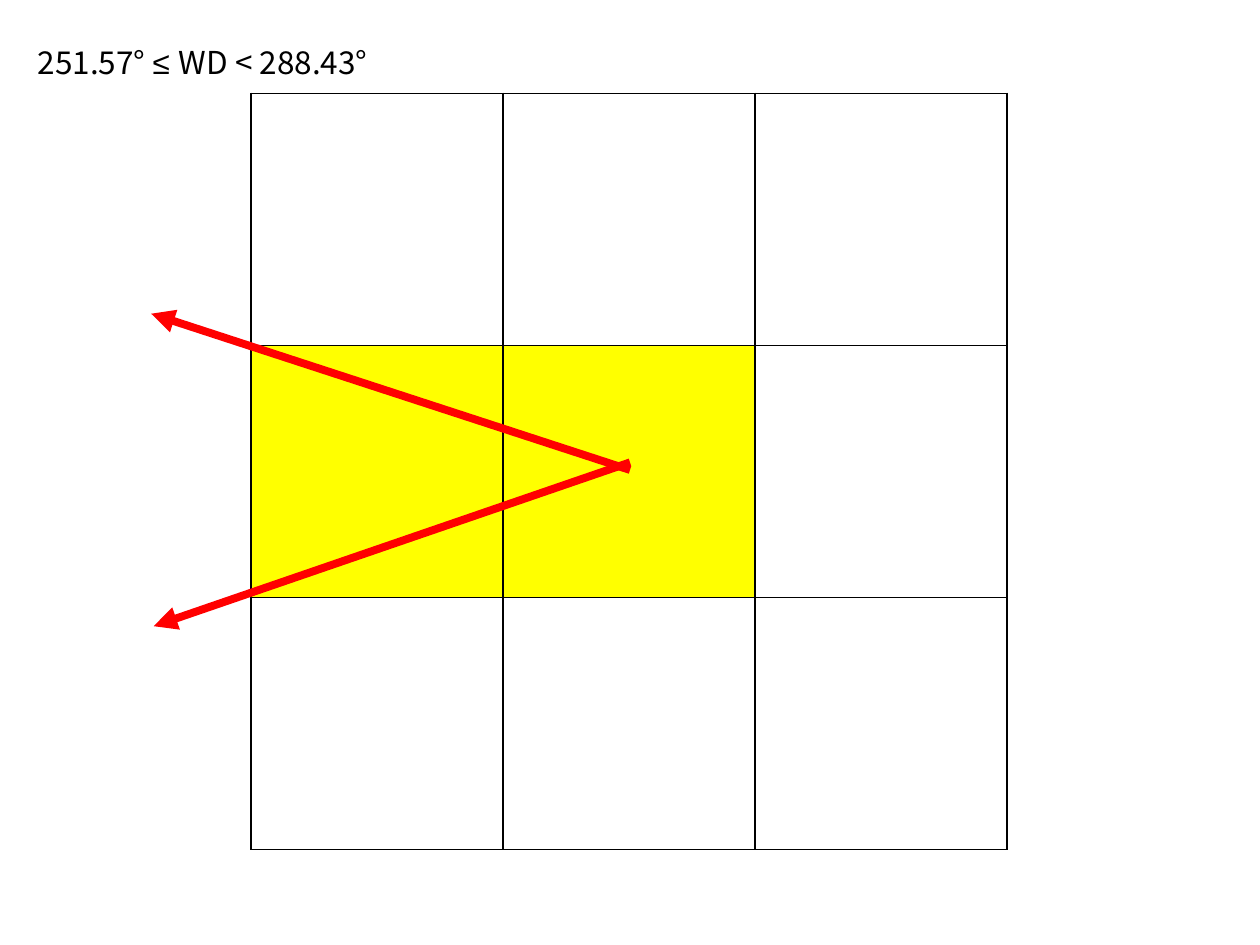
from lxml import etree
from pptx import Presentation
from pptx import util as u
from pptx.dml.color import RGBColor
from pptx.enum import shapes, text
from pptx.oxml import ns


def tint(code):
    """Turn a hex string into a colour."""
    return RGBColor.from_string(code)


def write(par, words, font="Noto Sans CJK KR", size=18, color="000000"):
    """Add a formatted run to a paragraph."""
    run = par.add_run()
    run.text = words
    run.font.name = font
    run.font.size = u.Pt(size)
    run.font.color.rgb = tint(color)
    east = etree.SubElement(run.font._element, ns.qn("a:ea"))
    east.set("typeface", font)


class Page:
    """Hold the style and the current slide."""

    ink, mark, blank, ray = "000000", "FFFF00", "FFFFFF", "FF0000"

    def __init__(self, deck):
        """Start a title-only slide."""
        self.slide = deck.slides.add_slide(deck.slide_layouts[5])

    def title(self, box, parts):
        """Place the title and write its runs."""
        shape = self.slide.shapes.title
        shape.left, shape.top, shape.width, shape.height = map(u.Inches, box)
        frame = shape.text_frame
        frame.word_wrap = False
        frame.auto_size = text.MSO_AUTO_SIZE.SHAPE_TO_FIT_TEXT
        frame.vertical_anchor = text.MSO_ANCHOR.TOP
        par = frame.paragraphs[0]
        par.alignment = text.PP_ALIGN.LEFT
        par.space_before = u.Pt(0)
        for words, font in parts:
            write(par, words, font=font, color=self.ink)

    def edge(self, cell):
        """Draw a thin border on each side of a cell."""
        props = cell._tc.get_or_add_tcPr()
        for spot, side in enumerate(("lnL", "lnR", "lnT", "lnB")):
            line = etree.Element(ns.qn(f"a:{side}"), w=str(u.Pt(1)))
            fill = etree.SubElement(line, ns.qn("a:solidFill"))
            etree.SubElement(fill, ns.qn("a:srgbClr"), val=self.ink)
            props.insert(spot, line)

    def grid(self, left, top, step, count, fills):
        """Add a square table with some filled cells."""
        side = u.Inches(step * count)
        table = self.slide.shapes.add_table(
            count, count, u.Inches(left), u.Inches(top), side, side).table
        table.first_row = table.horz_banding = False
        for row in range(count):
            for col in range(count):
                cell = table.cell(row, col)
                if (row, col) in fills:
                    cell.fill.solid()
                    cell.fill.fore_color.rgb = tint(fills[row, col])
                else:
                    cell.fill.background()
                self.edge(cell)

    def arrow(self, start, end):
        """Add a thick line with an arrowhead at its end."""
        ends = map(u.Inches, (*start, *end))
        link = self.slide.shapes.add_connector(
            shapes.MSO_CONNECTOR.STRAIGHT, *ends)
        link.line.color.rgb = tint(self.ray)
        link.line.width = u.Pt(4.5)
        etree.SubElement(link.line._get_or_add_ln(),
                         ns.qn("a:tailEnd"), type="triangle")
        etree.SubElement(link._element.spPr, ns.qn("a:effectLst"))


def main():
    """Build the wind sector slide."""
    deck = Presentation()
    deck.slide_width, deck.slide_height = u.Inches(10), u.Inches(7.5)
    page = Page(deck)
    page.grid(1.99, 0.74, 2, 3, {
        (1, 0): page.mark, (1, 1): page.mark,
        (1, 2): page.blank, (2, 2): page.blank})
    sans = "Noto Sans CJK KR"
    page.title((0.2, 0.29, 3.15, 0.4), [
        ("251.57° ", sans), ("≤ ", "Arial"), ("WD < 288.43°", sans)])
    page.arrow((5, 3.73), (1.2, 2.49))
    page.arrow((5, 3.67), (1.22, 4.97))
    deck.save("out.pptx")


if __name__ == "__main__":
    main()
